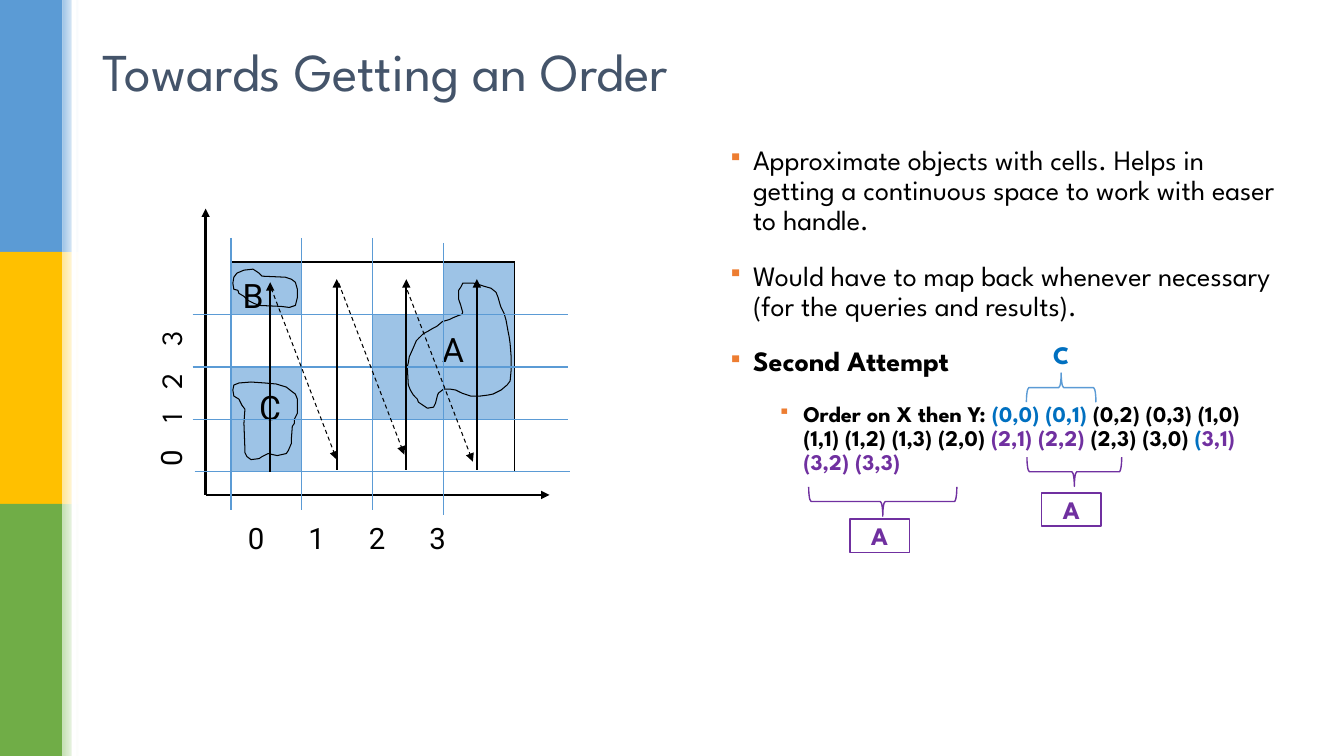
"""Build the slide on ordering grid cells column by column."""
from dataclasses import dataclass
from typing import Any, NamedTuple, Optional

from lxml.etree import SubElement
from pptx import Presentation
from pptx.dml.color import RGBColor
from pptx.enum.dml import MSO_LINE
from pptx.enum.shapes import MSO_CONNECTOR, MSO_SHAPE
from pptx.enum.text import MSO_ANCHOR, MSO_AUTO_SIZE, PP_ALIGN
from pptx.oxml import parse_xml
from pptx.oxml.ns import nsdecls, qn
from pptx.util import Inches, Pt

COLUMN = ROW = Inches(1)
COLUMNS, ROWS = 13.33, 7.5
CELLS = 4
CELL_WIDTH, CELL_HEIGHT = 2.81 / CELLS, 0.52
PLOT_LEFT, PLOT_TOP = 2.29, 2.6
BLACK, WHITE = RGBColor(0, 0, 0), RGBColor(255, 255, 255)
BLUE, PALE_BLUE = RGBColor(0x5B, 0x9B, 0xD5), RGBColor(0x9D, 0xC3, 0xE6)
GOLD, PALE_GOLD = RGBColor(0xFF, 0xC0, 0x00), RGBColor(0xFF, 0xE6, 0x99)
GREEN, PALE_GREEN = RGBColor(0x70, 0xAD, 0x47), RGBColor(0xC5, 0xE0, 0xB4)
SLATE, ORANGE = RGBColor(0x44, 0x54, 0x6A), RGBColor(0xED, 0x7D, 0x31)
PURPLE, DEEP_BLUE = RGBColor(0x70, 0x30, 0xA0), RGBColor(0x00, 0x70, 0xC0)
SPARTAN, ROBOTO = "League Spartan", "Roboto"


class Box(NamedTuple):
    left: float
    top: float
    width: float
    height: float


class Span(NamedTuple):
    text: str
    color: RGBColor = BLACK
    font: str = SPARTAN
    size: float = 20
    bold: bool = False


@dataclass
class Stroke:
    start: tuple[float, float]
    end: tuple[float, float]
    color: RGBColor = BLACK
    width: float = 1
    arrow: bool = True
    dashed: bool = False


@dataclass
class Blob:
    name: str
    margins: dict[str, int]
    points: list[tuple[float, float]]


@dataclass
class Tag:
    text: str
    box: Box
    color: RGBColor
    outline: Optional[RGBColor]
    brace: Box
    brace_color: RGBColor
    turn: int


PANELS = [(BLUE, PALE_BLUE), (GOLD, PALE_GOLD), (GREEN, PALE_GREEN)]
FILLED = {(0, 0), (0, 3), (1, 2), (1, 3), (2, 0), (2, 2), (2, 3), (3, 0)}
BLOBS = [
    Blob("A", {"margin_right": Inches(0.12), "margin_top": Inches(0.06)}, [
        (4.13, 3.38), (4.1, 3.45), (4.06, 3.54), (4.05, 3.6), (4.04, 3.64), (4.05, 3.82), (4.07, 3.87),
        (4.1, 3.92), (4.14, 3.96), (4.15, 3.99), (4.21, 4.03), (4.24, 4.05), (4.3, 4.04), (4.32, 4),
        (4.34, 3.92), (4.35, 3.9), (4.4, 3.86), (4.46, 3.86), (4.52, 3.87), (4.58, 3.9), (4.67, 3.93),
        (4.76, 3.93), (4.84, 3.92), (4.89, 3.91), (4.97, 3.87), (5.03, 3.82), (5.06, 3.78), (5.07, 3.67),
        (5.07, 3.54), (5.06, 3.41), (5.05, 3.34), (5.04, 3.29), (5.02, 3.18), (5, 3.11), (4.97, 3.05),
        (4.96, 3.02), (4.94, 2.95), (4.92, 2.9), (4.87, 2.86), (4.8, 2.84), (4.74, 2.82), (4.7, 2.81),
        (4.59, 2.81), (4.57, 2.85), (4.55, 2.88), (4.55, 2.97), (4.57, 3.03), (4.59, 3.1), (4.58, 3.12),
        (4.55, 3.13), (4.5, 3.15), (4.46, 3.17), (4.39, 3.19), (4.33, 3.24), (4.29, 3.26), (4.24, 3.29),
        (4.2, 3.31), (4.16, 3.35)]),
    Blob("B", {"margin_right": Inches(0.24), "margin_top": Inches(0.14)}, [
        (2.37, 2.91), (2.42, 2.94), (2.46, 2.98), (2.52, 3.01), (2.57, 3.03), (2.79, 3.04), (2.87, 3.05),
        (2.93, 3.03), (2.95, 2.95), (2.95, 2.87), (2.93, 2.8), (2.89, 2.77), (2.83, 2.75), (2.6, 2.74),
        (2.57, 2.71), (2.54, 2.69), (2.51, 2.67), (2.42, 2.68), (2.35, 2.71), (2.32, 2.75), (2.31, 2.81),
        (2.32, 2.87), (2.36, 2.88)]),
    Blob("C", {"margin_left": Inches(0.1), "margin_bottom": Inches(0.27)}, [
        (2.43, 4.06), (2.42, 4.2), (2.43, 4.46), (2.43, 4.49), (2.45, 4.53), (2.49, 4.56), (2.57, 4.55),
        (2.6, 4.53), (2.66, 4.5), (2.75, 4.52), (2.84, 4.5), (2.86, 4.47), (2.89, 4.4), (2.89, 4.36),
        (2.9, 4.23), (2.92, 4.2), (2.92, 4.16), (2.95, 4.1), (2.95, 3.96), (2.93, 3.91), (2.89, 3.88),
        (2.84, 3.84), (2.74, 3.81), (2.63, 3.8), (2.49, 3.79), (2.37, 3.8), (2.32, 3.82), (2.31, 3.87),
        (2.32, 3.93), (2.37, 3.96), (2.4, 4.02)]),
]
TAGS = [
    Tag("C", Box(10.23, 3.35, 0.59, 0.33), DEEP_BLUE, None, Box(10.38, 3.5, 0.29, 0.69), BLUE, 270),
    Tag("A", Box(10.33, 4.89, 0.59, 0.33), PURPLE, PURPLE, Box(10.51, 4.21, 0.29, 0.94), PURPLE, 90),
    Tag("A", Box(8.43, 5.15, 0.59, 0.33), PURPLE, PURPLE, Box(8.61, 4.24, 0.29, 1.47), PURPLE, 90),
]
ORDER = [("Order on X then Y: ", BLACK), ("(0,0) (0,1) ", DEEP_BLUE),
         ("(0,2) (0,3) (1,0) (1,1) (1,2) (1,3) (2,0) ", BLACK), ("(2,1) (2,2) ", PURPLE),
         ("(2,3) (3,0) ", BLACK), ("(", DEEP_BLUE), ("3,1) (3,2) (3,3)", PURPLE)]
POINTS = [
    (0.25, 0, [Span("Approximate objects with cells. Helps in getting a continuous space "
                    "to work with easer to handle.")]),
    (0.25, 0, [Span("Would have to map back whenever necessary (for the queries and results).")]),
    (0.25, 0, [Span("Second Attempt", bold=True)]),
    (0.75, 0.12, [Span(text, color, size=16, bold=True) for text, color in ORDER]),
]


def assign(target: Any, values: dict[str, Any]) -> None:
    for name, value in values.items():
        setattr(target, name, value)


def place(shares: tuple[float, ...]) -> tuple[int, ...]:
    return tuple(int(share * unit) for share, unit in zip(shares, (COLUMN, ROW) * 2))


def write(para: Any, spans: list[Span]) -> None:
    for span in spans:
        run = para.add_run()
        run.text = span.text
        assign(run.font, {"name": span.font, "size": Pt(span.size), "bold": span.bold})
        run.font.color.rgb = span.color


def paint(shape: Any, fill: Optional[RGBColor], line: Optional[RGBColor] = None, width: float = 1) -> None:
    shape.shadow.inherit = False
    for part, color in ((shape.fill, fill), (shape.line.fill, line)):
        if color is None:
            part.background()
        else:
            part.solid()
            part.fore_color.rgb = color
    if line is not None:
        shape.line.width = Pt(width)


def add_block(page: Any, box: Box, fill: Optional[RGBColor], line: Optional[RGBColor] = None,
              kind: Any = MSO_SHAPE.RECTANGLE, turn: int = 0) -> Any:
    shape = page.shapes.add_shape(kind, *place(box))
    paint(shape, fill, line)
    shape.rotation = turn
    return shape


def add_panels(page: Any) -> None:
    height = ROWS / len(PANELS)
    for index, (strong, pale) in enumerate(PANELS):
        add_block(page, Box(0, index * height, 0.62, height), strong)
        fade = add_block(page, Box(0.62, index * height, 0.16, height), pale)
        fade.fill.gradient()
        fade.fill.gradient_angle = 0
        for stop, color in zip(fade.fill.gradient_stops, (pale, WHITE)):
            stop.color.rgb = color
    add_block(page, Box(0.71, 0, 0.05, ROWS), WHITE)


def add_cells(page: Any) -> None:
    box = Box(PLOT_LEFT, PLOT_TOP, CELLS * CELL_WIDTH, CELLS * CELL_HEIGHT)
    table = page.shapes.add_table(CELLS, CELLS, *place(box)).table
    assign(table, {"first_row": False, "horz_banding": False})
    for index, cell in enumerate(table.iter_cells()):
        cell.fill.background()
        if divmod(index, CELLS) in FILLED:
            cell.fill.solid()
            cell.fill.fore_color.rgb = PALE_BLUE
        for position, side in enumerate("LRTB"):
            border = f'<a:ln{side} {nsdecls("a")} w="12700"><a:solidFill><a:srgbClr val="{BLACK}"/></a:solidFill></a:ln{side}>'
            cell._tc.get_or_add_tcPr().insert(position, parse_xml(border))


def add_stroke(page: Any, stroke: Stroke) -> None:
    ends = place(stroke.start + stroke.end)
    connector = page.shapes.add_connector(MSO_CONNECTOR.STRAIGHT, *ends)
    connector.line.color.rgb = stroke.color
    connector.line.width = Pt(stroke.width)
    if stroke.dashed:
        connector.line.dash_style = MSO_LINE.DASH
    if stroke.arrow:
        SubElement(connector.line._get_or_add_ln(), qn("a:tailEnd"), type="triangle")
    SubElement(connector._element.spPr, qn("a:effectLst"))


def add_scale(page: Any, box: Box, turn: int, stops: list[float], spans: list[Span]) -> None:
    shape = add_block(page, box, WHITE, turn=turn)
    shape.text_frame.vertical_anchor = MSO_ANCHOR.TOP
    para = shape.text_frame.paragraphs[0]
    para.alignment = PP_ALIGN.LEFT
    tabs = SubElement(para._p.get_or_add_pPr(), qn("a:tabLst"))
    for stop in stops:
        SubElement(tabs, qn("a:tab"), pos=str(Inches(stop)), algn="l")
    write(para, spans)


def add_blob(page: Any, blob: Blob) -> None:
    first, *others = [place(point) for point in blob.points]
    builder = page.shapes.build_freeform(*first)
    builder.add_line_segments(others, close=True)
    shape = builder.convert_to_shape()
    paint(shape, None, BLACK, 0.75)
    flat = dict.fromkeys(("margin_left", "margin_right", "margin_top", "margin_bottom"), 0)
    assign(shape.text_frame, {**flat, **blob.margins, "word_wrap": False, "vertical_anchor": MSO_ANCHOR.MIDDLE})
    para = shape.text_frame.paragraphs[0]
    para.alignment = PP_ALIGN.CENTER
    write(para, [Span(blob.name, font=ROBOTO, size=24)])


def add_tag(page: Any, tag: Tag) -> None:
    add_block(page, tag.brace, None, tag.brace_color, MSO_SHAPE.RIGHT_BRACE, tag.turn)
    frame = add_block(page, tag.box, None, tag.outline).text_frame
    assign(frame, {"vertical_anchor": MSO_ANCHOR.MIDDLE, "word_wrap": True})
    frame.paragraphs[0].alignment = PP_ALIGN.CENTER
    write(frame.paragraphs[0], [Span(tag.text, tag.color, size=18, bold=True)])


def add_points(page: Any) -> None:
    frame = page.shapes.add_textbox(*place(Box(7.12, 1.4, 5.71, 5.41))).text_frame
    frame.word_wrap = True
    for index, (indent, right, spans) in enumerate(POINTS):
        para = frame.add_paragraph() if index else frame.paragraphs[0]
        assign(para, {"line_spacing": 0.9, "space_before": Pt(6 if index else 0),
                      "space_after": Pt(12), "level": int(indent > 0.5)})
        layout = para._p.get_or_add_pPr()
        for name, length in (("marL", indent), ("marR", right), ("indent", -0.25)):
            layout.set(name, str(Inches(length)))
        SubElement(SubElement(layout, qn("a:buClr")), qn("a:srgbClr"), val=str(ORANGE))
        SubElement(layout, qn("a:buSzPct"), val="75000")
        SubElement(layout, qn("a:buChar"), char="▪")
        write(para, spans)


def add_title(page: Any) -> None:
    title = page.shapes.title
    assign(title, dict(zip(("left", "top", "width", "height"), place(Box(0.92, 0.15, 11.5, 1.1)))))
    assign(title.text_frame, {"vertical_anchor": MSO_ANCHOR.MIDDLE, "word_wrap": True, "auto_size": MSO_AUTO_SIZE.NONE})
    title.text_frame.paragraphs[0].alignment = PP_ALIGN.LEFT
    write(title.text_frame.paragraphs[0], [Span("Towards Getting an Order", SLATE, size=38)])


def plot_strokes() -> list[Stroke]:
    corner = (2.04, 4.91)
    strokes = [Stroke(corner, (5.45, 4.91), width=1.75), Stroke(corner, (2.04, 2.07), width=1.75)]
    for index, (drop, shift) in enumerate(zip((0, 0, 0, 0.05), (0, 0, 0, 0.02))):
        x = PLOT_LEFT + index * CELL_WIDTH
        y = PLOT_TOP + (index + 1) * CELL_HEIGHT
        strokes.append(Stroke((x, 2.36 + drop), (x, 5.06 + drop), BLUE, arrow=False))
        strokes.append(Stroke((1.91 + shift, y), (5.63 + shift, y), BLUE, arrow=False))
    strokes += [Stroke((x, 4.66), (x, 2.77), width=1.25) for x in (3.34, 4.03, 4.73)]
    strokes.append(Stroke((2.68, 4.68), (2.68, 2.8), width=1.25))
    strokes += [Stroke((x, y), (x + 0.65, y + 1.7), width=0.75, dashed=True)
                for x, y in ((2.69, 2.86), (3.36, 2.81), (4.04, 2.88))]
    return strokes


def main() -> None:
    deck = Presentation()
    assign(deck, {"slide_width": int(COLUMNS * COLUMN), "slide_height": int(ROWS * ROW)})
    page = deck.slides.add_slide(deck.slide_layouts[5])
    add_panels(page)
    add_title(page)
    add_cells(page)
    add_points(page)
    add_scale(page, Box(2.36, 5.11, 2.67, 0.5), 0, [0.6, 1.2, 1.8], [Span("0\t1\t2\t3", font=ROBOTO, size=21)])
    add_scale(page, Box(0.38, 3.37, 2.67, 0.5), 270, [0.23, 0.67, 0.99, 1.42],
              [Span("\t0", font=ROBOTO, size=21), Span("\t1\t2\t3", size=21)])
    for blob in BLOBS:
        add_blob(page, blob)
    for stroke in plot_strokes():
        add_stroke(page, stroke)
    for tag in TAGS:
        add_tag(page, tag)
    deck.save("out.pptx")


if __name__ == "__main__":
    main()
